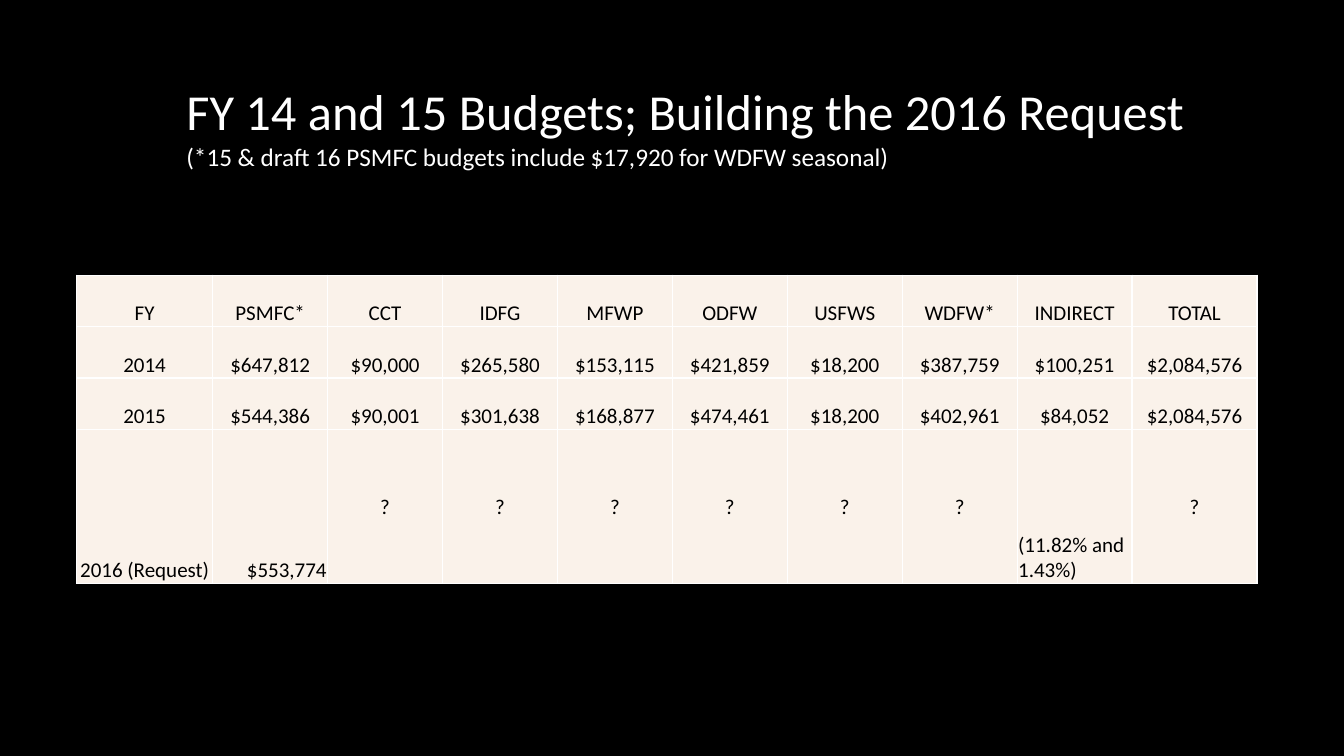
from lxml import etree
from pptx import Presentation
from pptx.dml.color import RGBColor
from pptx.enum.text import MSO_ANCHOR, PP_ALIGN
from pptx.oxml.ns import qn
from pptx.util import Inches, Pt

LEFT, CENTER, RIGHT = PP_ALIGN.LEFT, PP_ALIGN.CENTER, PP_ALIGN.RIGHT
MIDDLE, BOTTOM = MSO_ANCHOR.MIDDLE, MSO_ANCHOR.BOTTOM

TITLE = [
    ("FY 14 and 15 Budgets; Building the 2016 Request", 36),
    ("(*15 & draft 16 PSMFC budgets include $17,920 for WDFW seasonal)", 18),
]
BUDGET = [
    ["FY", "PSMFC*", "CCT", "IDFG", "MFWP", "ODFW", "USFWS", "WDFW*",
     "INDIRECT", "TOTAL"],
    ["2014", "$647,812", "$90,000", "$265,580", "$153,115", "$421,859",
     "$18,200", "$387,759", "$100,251", "$2,084,576"],
    ["2015", "$544,386", "$90,001", "$301,638", "$168,877", "$474,461",
     "$18,200", "$402,961", "$84,052", "$2,084,576"],
    ["2016 (Request)", "$553,774"] + ["?"] * 6 + ["(11.82% and 1.43%)", "?"],
]
WIDTHS = [1.35] + [1.14] * 8 + [1.24]
HEIGHTS = [0.51] * 3 + [1.53]
ALIGNS = {"$553,774": RIGHT, "(11.82% and 1.43%)": LEFT}


def color(code):
    return RGBColor.from_string(code)


class Deck:
    font = "Calibri"
    paper, ink, pale = "000000", "FFFFFF", "FAF2EA"
    inset = {"margin_left": 0.01, "margin_right": 0.01,
             "margin_top": 0.01, "margin_bottom": 0}

    def __init__(self):
        self.file = Presentation()
        self.file.slide_width = Inches(13.33)
        self.file.slide_height = Inches(7.5)
        self.slide = self.file.slides.add_slide(self.file.slide_layouts[6])
        fill = self.slide.background.fill
        fill.solid()
        fill.fore_color.rgb = color(self.paper)

    def style(self, para, size, tint):
        for name, value in {"name": self.font, "size": Pt(size)}.items():
            setattr(para.font, name, value)
        para.font.color.rgb = color(tint)

    def text(self, lines, left, top, width, height):
        box = self.slide.shapes.add_textbox(
            Inches(left), Inches(top), Inches(width), Inches(height))
        frame = box.text_frame
        frame.word_wrap = True
        for i, (line, size) in enumerate(lines):
            para = frame.add_paragraph() if i else frame.paragraphs[0]
            para.text = line
            self.style(para, size, self.ink)

    def border(self, cell):
        props = cell._tc.get_or_add_tcPr()
        for i, side in enumerate(("a:lnL", "a:lnR", "a:lnT", "a:lnB")):
            line = etree.Element(qn(side), w=str(Pt(1)))
            fill = etree.SubElement(line, qn("a:solidFill"))
            etree.SubElement(fill, qn("a:srgbClr"), val=self.ink)
            props.insert(i, line)

    def cell(self, cell, label):
        cell.text = label
        for name, value in self.inset.items():
            setattr(cell, name, Inches(value))
        cell.vertical_anchor = MIDDLE if label == "?" else BOTTOM
        cell.fill.solid()
        cell.fill.fore_color.rgb = color(self.pale)
        para = cell.text_frame.paragraphs[0]
        para.alignment = ALIGNS.get(label, CENTER)
        self.style(para, 15, self.paper)
        self.border(cell)

    def table(self, rows, left, top, widths, heights):
        grid = self.slide.shapes.add_table(
            len(rows), len(widths), Inches(left), Inches(top),
            Inches(sum(widths)), Inches(sum(heights))).table
        for col, width in zip(grid.columns, widths):
            col.width = Inches(width)
        for row, height, labels in zip(grid.rows, heights, rows):
            row.height = Inches(height)
            for cell, label in zip(row.cells, labels):
                self.cell(cell, label)


def main():
    deck = Deck()
    deck.text(TITLE, 1.75, 0.75, 10.19, 1.31)
    deck.table(BUDGET, 0.76, 2.73, WIDTHS, HEIGHTS)
    deck.file.save("out.pptx")


if __name__ == "__main__":
    main()
